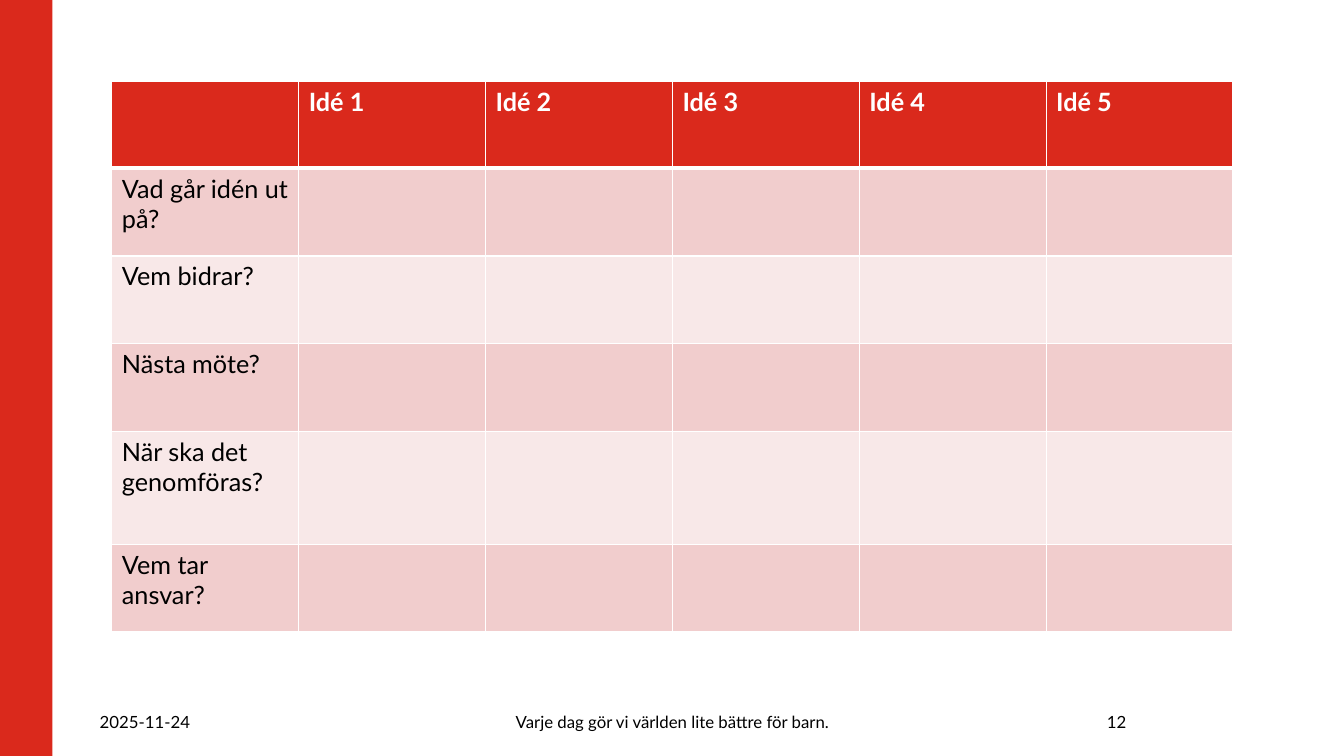
from lxml import etree
from pptx import Presentation, util as u
from pptx.dml.color import RGBColor
from pptx.enum import shapes, text
from pptx.oxml.ns import qn

PX = 9144  # 100 px to the inch
THEME = {
    "font": "Lato", "cell": 18, "foot": 12,
    "red": "DA291C", "dark": "F1CDCD", "light": "F8E8E8",
    "white": "FFFFFF", "black": "000000",
}


def style(para, size, color, bold=False):
    font = para.font
    font.name, font.size, font.bold = THEME["font"], u.Pt(THEME[size]), bold
    font.color.rgb = RGBColor.from_string(THEME[color])


def border(cell, sides):
    props = cell._tc.get_or_add_tcPr()
    for spot, (side, width) in enumerate(sides.items()):
        line = etree.Element(qn(f"a:ln{side}"), w=str(u.Pt(width)))
        fill = etree.SubElement(line, qn("a:solidFill"))
        etree.SubElement(fill, qn("a:srgbClr"), val=THEME["white"])
        props.insert(spot, line)


prs = Presentation()
prs.slide_width, prs.slide_height = 1333 * PX, 750 * PX
slide = prs.slides.add_slide(prs.slide_layouts[6])

# Red side band
band = slide.shapes.add_shape(shapes.MSO_SHAPE.RECTANGLE, 0, 0, 52 * PX, 750 * PX)
band.shadow.inherit = False
band.fill.solid()
band.fill.fore_color.rgb = RGBColor.from_string(THEME["red"])
band.line.fill.background()

# Footer: date, motto, page number
ALIGN = text.PP_ALIGN
left = 89
for words, width, align in [
    ("2025-11-24", 188, ALIGN.LEFT),
    ("Varje dag gör vi världen lite bättre för barn.", 780, ALIGN.CENTER),
    ("12", 70, ALIGN.RIGHT),
]:
    box = slide.shapes.add_textbox(left * PX, 706 * PX, width * PX, 20 * PX)
    frame = box.text_frame
    frame.word_wrap = True
    frame.vertical_anchor = text.MSO_ANCHOR.MIDDLE
    frame.text = words
    para = frame.paragraphs[0]
    para.alignment = align
    style(para, "foot", "black")
    left += width

# Idea table: one column per idea, one row per question
asks = ["", "Vad går idén ut på?", "Vem bidrar?", "Nästa möte?",
        "När ska det genomföras?", "Vem tar ansvar?"]
highs = [86, 87, 87, 87, 112, 87]
cols = 6
grid = slide.shapes.add_table(
    len(asks), cols, 111 * PX, 81 * PX, 1112 * PX, sum(highs) * PX).table
for col in grid.columns:
    col.width = 1112 * PX // cols

for r, (ask, high) in enumerate(zip(asks, highs)):
    grid.rows[r].height = high * PX
    head = r == 0
    shade = "red" if head else "dark" if r % 2 else "light"
    for c in range(cols):
        cell = grid.cell(r, c)
        if c == 0:
            cell.text = ask
        elif head:
            cell.text = f"Idé {c}"
        style(cell.text_frame.paragraphs[0], "cell",
              "white" if head else "black", head)
        border(cell, {"L": 1, "R": 1, "T": 3 if r == 1 else 1, "B": 3 if head else 1})
        cell.fill.solid()
        cell.fill.fore_color.rgb = RGBColor.from_string(THEME[shade])

prs.save("out.pptx")
